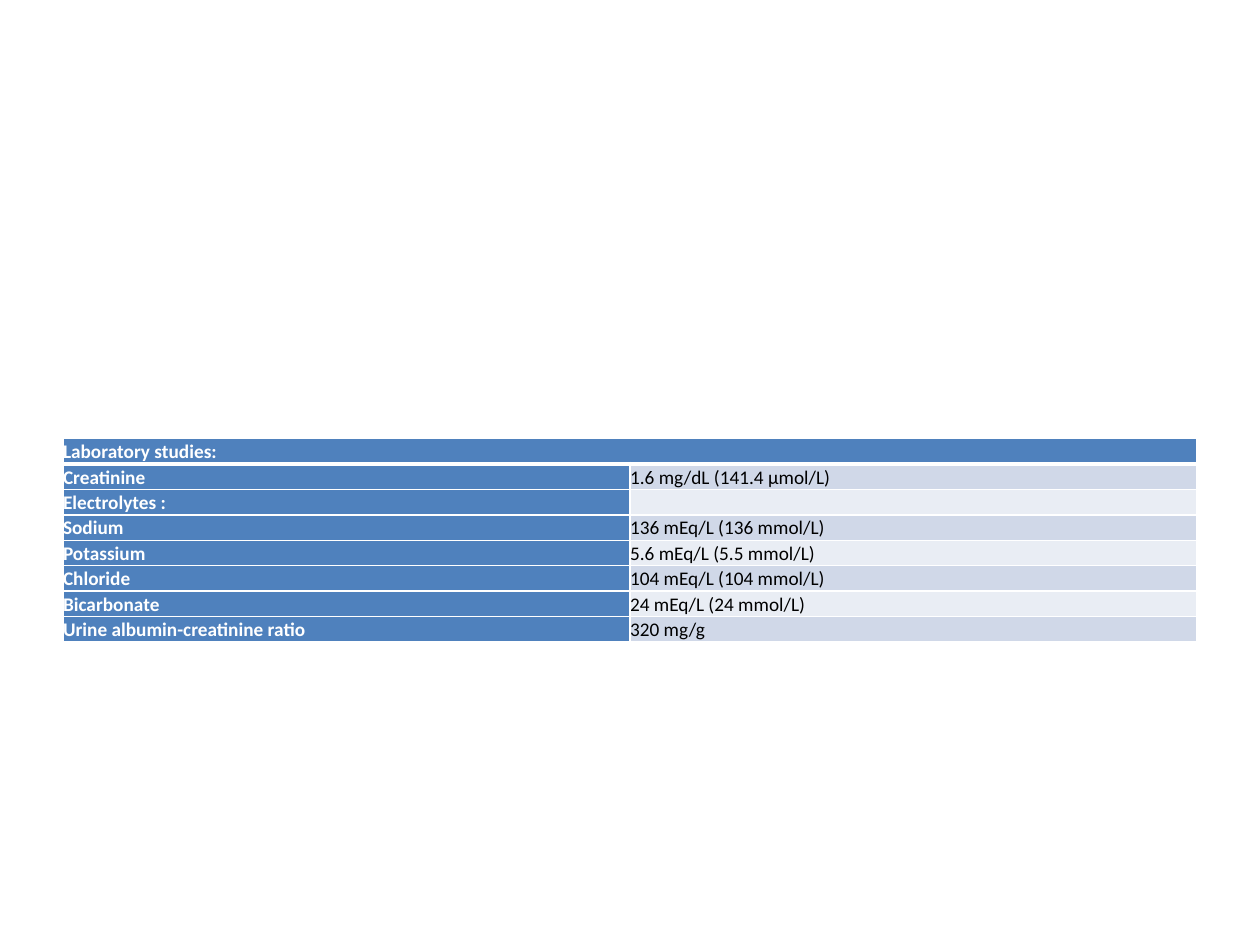
from dataclasses import dataclass

from lxml import etree
from pptx import Presentation
from pptx.dml.color import RGBColor
from pptx.enum.text import MSO_ANCHOR
from pptx.oxml.ns import qn
from pptx.util import Inches, Pt

MIDDLE = MSO_ANCHOR.MIDDLE
TOP = MSO_ANCHOR.TOP


@dataclass(frozen=True)
class Theme:
    font: str = "Calibri"
    size: float = 11
    line_spacing: float = 1.07
    label_fill: str = "4F81BD"
    label_text: str = "FFFFFF"
    value_fills: tuple = ("D0D8E8", "E9EDF4")
    value_text: str = "000000"
    rule: str = "FFFFFF"
    thin: float = 1
    thick: float = 3


THEME = Theme()
HEADING = "Laboratory studies:"
RESULTS = [
    ("Creatinine ", "1.6 mg/dL (141.4 µmol/L)"),
    ("Electrolytes :", ""),
    ("Sodium ", "136 mEq/L (136 mmol/L)"),
    ("Potassium ", "5.6 mEq/L (5.5 mmol/L)"),
    ("Chloride ", "104 mEq/L (104 mmol/L)"),
    ("Bicarbonate ", "24 mEq/L (24 mmol/L)"),
    ("Urine albumin-creatinine ratio ", "320 mg/g"),
]


def add_borders(cell, top, bottom):
    properties = cell._tc.get_or_add_tcPr()
    widths = {"a:lnL": THEME.thin, "a:lnR": THEME.thin, "a:lnT": top, "a:lnB": bottom}
    for tag, width in widths.items():
        line = etree.SubElement(properties, qn(tag), w=str(Pt(width)))
        fill = etree.SubElement(line, qn("a:solidFill"))
        etree.SubElement(fill, qn("a:srgbClr"), val=THEME.rule)


def style_cell(cell, text, fill, color, bold, top=THEME.thin, bottom=THEME.thin):
    add_borders(cell, top, bottom)
    cell.fill.solid()
    cell.fill.fore_color.rgb = RGBColor.from_string(fill)
    cell.margin_left = cell.margin_right = cell.margin_top = cell.margin_bottom = 0
    cell.vertical_anchor = TOP
    cell.text = text
    paragraph = cell.text_frame.paragraphs[0]
    paragraph.line_spacing = THEME.line_spacing
    paragraph.font.name = THEME.font
    paragraph.font.size = Pt(THEME.size)
    paragraph.font.bold = bold
    paragraph.font.color.rgb = RGBColor.from_string(color)


def add_lab_results(slide, left, top, width, height):
    row_count = len(RESULTS) + 1
    lab_table = slide.shapes.add_table(row_count, 2, left, top, width, height).table
    lab_table.horz_banding = False
    for column in lab_table.columns:
        column.width = width // 2
    for row in lab_table.rows:
        row.height = height // row_count

    for column in range(2):
        style_cell(lab_table.cell(0, column), "" if column else HEADING,
                   THEME.label_fill, THEME.label_text, True, bottom=THEME.thick)
    heading = lab_table.cell(0, 0)
    heading.merge(lab_table.cell(0, 1))
    heading.vertical_anchor = MIDDLE

    for index, (test, result) in enumerate(RESULTS):
        above = THEME.thin if index else THEME.thick
        style_cell(lab_table.cell(index + 1, 0), test,
                   THEME.label_fill, THEME.label_text, True, top=above)
        style_cell(lab_table.cell(index + 1, 1), result,
                   THEME.value_fills[index % 2], THEME.value_text, False, top=above)


def main():
    presentation = Presentation()
    presentation.slide_width = Inches(10)
    presentation.slide_height = Inches(7.5)
    slide = presentation.slides.add_slide(presentation.slide_layouts[6])
    add_lab_results(slide, Inches(0.5), Inches(3.48), Inches(9), Inches(1.5))
    presentation.save("out.pptx")


if __name__ == "__main__":
    main()
